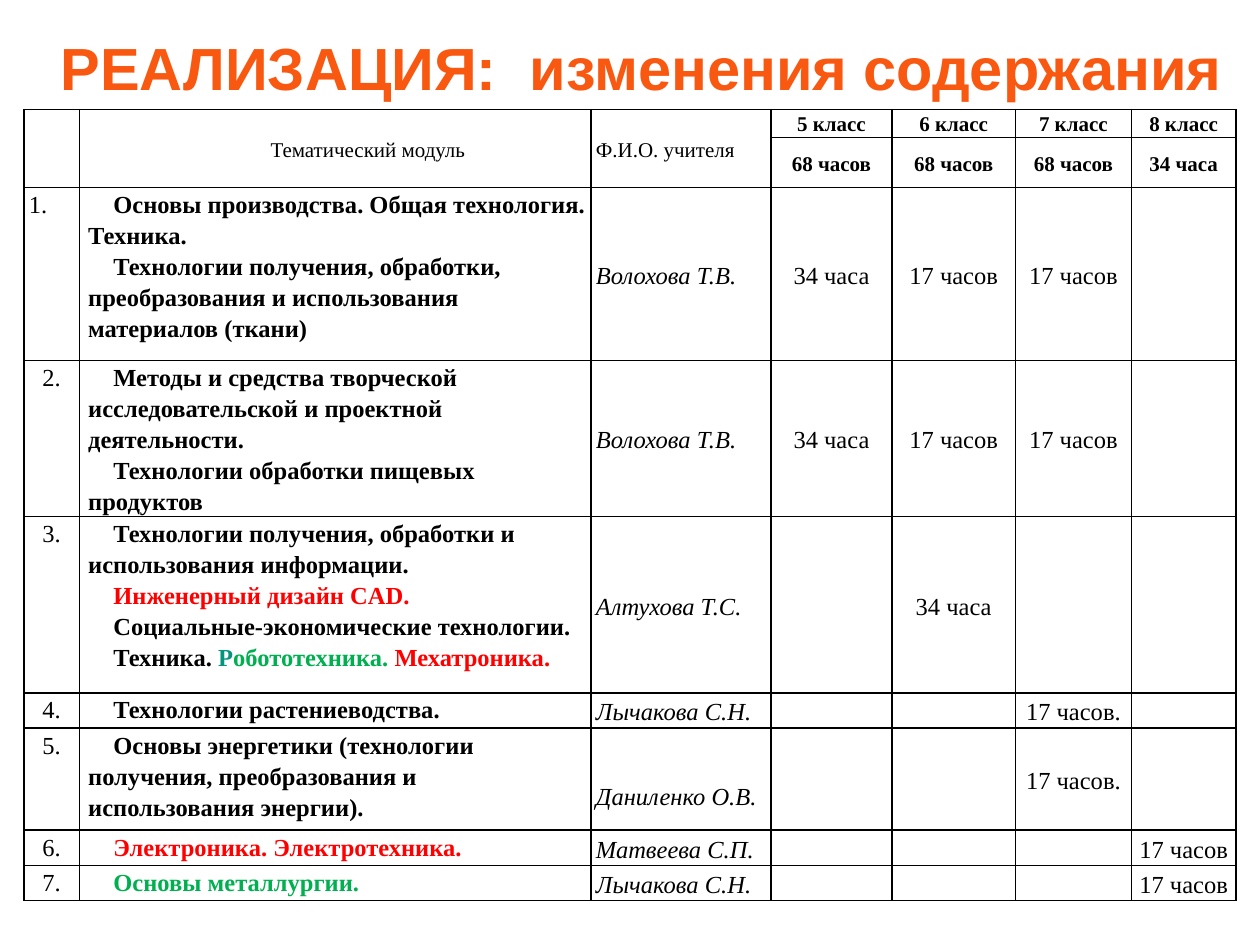
from lxml import etree
from pptx import Presentation
from pptx.dml.color import RGBColor
from pptx.enum import text
from pptx.oxml import ns
from pptx.util import Inches, Pt

THEME = {
    "title_font": "Arial", "body_font": "Times New Roman",
    "title_size": 34, "header_size": 12, "body_size": 14,
    "orange": "F85810", "black": "000000", "white": "FFFFFF",
    "red": "FF0000", "green": "00B050", "teal": "06947C",
}

# Content
TITLE = "РЕАЛИЗАЦИЯ:  изменения содержания"
MODULE_HEADER, TEACHER_HEADER = "Тематический модуль", "Ф.И.О. учителя"
GRADES = [("5 класс", "68 часов"), ("6 класс", "68 часов"),
          ("7 класс", "68 часов"), ("8 класс", "34 часа")]
# Each module: paragraphs of (wording, colour) runs, teacher, hours by grade
MODULES = [
    ([[("Основы производства. Общая технология. Техника.", "black")],
      [("Технологии получения, обработки, преобразования и использования "
        "материалов (ткани)", "black")]],
     "Волохова Т.В.", ["34 часа", "17 часов", "17 часов", ""]),
    ([[("Методы и средства творческой исследовательской и проектной "
        "деятельности.", "black")],
      [("Технологии обработки пищевых продуктов", "black")]],
     "Волохова Т.В.", ["34 часа", "17 часов", "17 часов", ""]),
    ([[("Технологии получения, обработки и использования информации.", "black")],
      [("Инженерный дизайн CAD.", "red")],
      [("Социальные-экономические технологии.", "black")],
      [("Техника. ", "black"), ("Р", "teal"), ("обототехника. ", "green"),
       ("Мехатроника.", "red")]],
     "Алтухова Т.С.", ["", "34 часа", "", ""]),
    ([[("Технологии растениеводства.", "black")]],
     "Лычакова С.Н.", ["", "", "17 часов.", ""]),
    ([[("Основы энергетики (технологии получения, преобразования и "
        "использования энергии).", "black")]],
     "Даниленко О.В.", ["", "", "17 часов.", ""]),
    ([[("Электроника. Электротехника.", "red")]],
     "Матвеева С.П.", ["", "", "", "17 часов"]),
    ([[("Основы металлургии.", "green")]],
     "Лычакова С.Н.", ["", "", "", "17 часов"]),
]
COLUMN_WIDTHS = [0.44, 4.06, 1.43, 0.96, 0.98, 0.92, 0.83]
ROW_HEIGHTS = [0.22, 0.4, 1.37, 1.24, 1.4, 0.28, 0.81, 0.28, 0.28]
LOWERED_TEACHER = "Даниленко О.В."

LEFT, CENTER = text.PP_ALIGN.LEFT, text.PP_ALIGN.CENTER
TOP, MIDDLE = text.MSO_ANCHOR.TOP, text.MSO_ANCHOR.MIDDLE


def add_run(paragraph, wording, font, size, color, bold=False, italic=False):
    run = paragraph.add_run()
    run.text = wording
    run.font.name, run.font.size = THEME[font], Pt(THEME[size])
    run.font.bold, run.font.italic = bold, italic
    run.font.color.rgb = RGBColor.from_string(THEME[color])


def write(cell, paragraphs, align=CENTER, anchor=MIDDLE, size="body_size",
          margin=0, indent=0, **style):
    """Fill a cell with paragraphs, each a list of (wording, colour) runs."""
    cell.vertical_anchor = anchor
    for number, runs in enumerate(paragraphs):
        frame = cell.text_frame
        paragraph = frame.add_paragraph() if number else frame.paragraphs[0]
        paragraph.alignment, paragraph.line_spacing = align, 1.15
        if margin or indent:
            properties = paragraph._p.get_or_add_pPr()
            properties.set("marL", str(Inches(margin)))
            properties.set("indent", str(Inches(indent)))
        for wording, color in runs:
            add_run(paragraph, wording, "body_font", size, color, **style)


def plain(wording):
    return [[(wording, "black")]]


def format_cell(cell):
    """Set insets, white fill and thin black borders."""
    cell.margin_left = cell.margin_right = Inches(0.04)
    cell.margin_top = cell.margin_bottom = 0
    cell.fill.solid()
    cell.fill.fore_color.rgb = RGBColor.from_string(THEME["white"])
    properties = cell._tc.get_or_add_tcPr()
    for place, side in enumerate(("lnL", "lnR", "lnT", "lnB")):
        line = etree.Element(ns.qn(f"a:{side}"), w=str(Pt(1)))
        fill = etree.SubElement(line, ns.qn("a:solidFill"))
        etree.SubElement(fill, ns.qn("a:srgbClr"), val=THEME["black"])
        properties.insert(place, line)
    # Keeps blank cells from stretching low rows
    if not cell.text:
        etree.SubElement(cell.text_frame.paragraphs[0]._p, ns.qn("a:endParaRPr"),
                         sz=str(THEME["header_size"] * 100))


def add_title(slide):
    title = slide.shapes.title
    title.left, title.top = Inches(0.37), Inches(0.17)
    title.width, title.height = Inches(9.44), Inches(0.83)
    frame = title.text_frame
    frame.margin_left = frame.margin_right = 0
    frame.vertical_anchor = MIDDLE
    heading = frame.paragraphs[0]
    heading.alignment, heading.line_spacing = CENTER, 0.8
    add_run(heading, TITLE, "title_font", "title_size", "orange", bold=True)


def add_schedule(slide):
    schedule = slide.shapes.add_table(
        len(ROW_HEIGHTS), len(COLUMN_WIDTHS), Inches(0.19), Inches(0.87),
        Inches(sum(COLUMN_WIDTHS)), Inches(sum(ROW_HEIGHTS))).table
    schedule.first_row = schedule.horz_banding = False
    for column, width in zip(schedule.columns, COLUMN_WIDTHS):
        column.width = Inches(width)
    for row, height in zip(schedule.rows, ROW_HEIGHTS):
        row.height = Inches(height)

    # Header: three tall cells, then grade over yearly hours
    for column in range(3):
        schedule.cell(0, column).merge(schedule.cell(1, column))
    write(schedule.cell(0, 1), plain(MODULE_HEADER), size="header_size", indent=0.52)
    write(schedule.cell(0, 2), plain(TEACHER_HEADER), LEFT, size="header_size")
    for column, (grade, hours) in enumerate(GRADES, start=3):
        write(schedule.cell(0, column), plain(grade), anchor=TOP,
              size="header_size", bold=True)
        write(schedule.cell(1, column), plain(hours),
              size="header_size", bold=True)

    # Modules
    for number, (topics, teacher, hours) in enumerate(MODULES, start=1):
        row = number + 1
        write(schedule.cell(row, 0), plain(f"{number}."),
              LEFT if number == 1 else CENTER, TOP)
        write(schedule.cell(row, 1), topics, LEFT, TOP,
              margin=0.03, indent=0.2, bold=True)
        write(schedule.cell(row, 2), plain(teacher), LEFT, italic=True)
        for column, amount in enumerate(hours, start=3):
            if amount:
                write(schedule.cell(row, column), plain(amount))

    for cell in schedule.iter_cells():
        format_cell(cell)
        if cell.text == LOWERED_TEACHER:
            cell.margin_top = Inches(0.26)


def main():
    deck = Presentation()
    deck.slide_width, deck.slide_height = Inches(10), Inches(7.5)
    slide = deck.slides.add_slide(deck.slide_layouts[5])
    add_title(slide)
    add_schedule(slide)
    deck.save("out.pptx")


if __name__ == "__main__":
    main()
